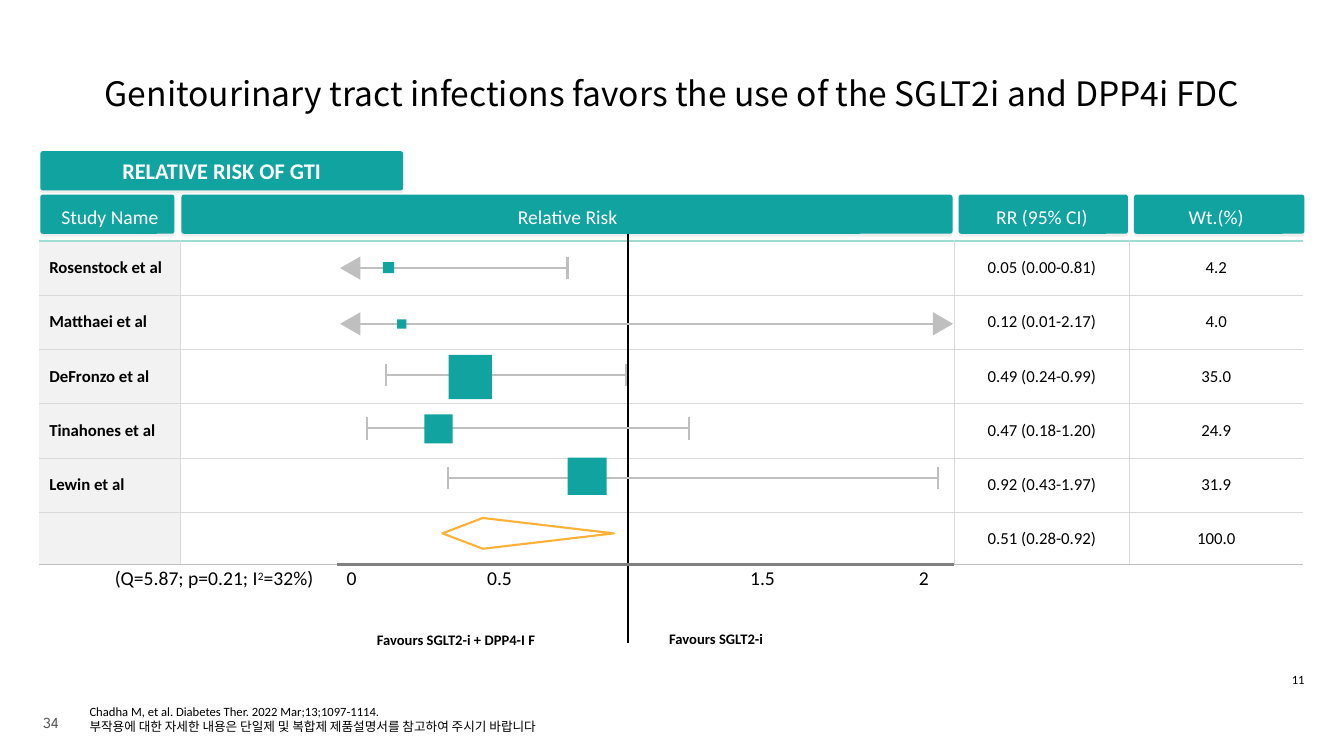
from pptx import Presentation
from pptx.dml.color import RGBColor
from pptx.enum.shapes import MSO_CONNECTOR, MSO_SHAPE
from pptx.enum.text import MSO_ANCHOR as ANCHOR, PP_ALIGN as ALIGN
from pptx.oxml.ns import qn
from pptx.util import Pt
from lxml.etree import SubElement

TEAL = RGBColor(0x10, 0xA3, 0x9F)
MINT = RGBColor(0x9F, 0xDD, 0xD3)
AMBER = RGBColor(0xFD, 0xB1, 0x36)
BLACK = RGBColor(0, 0, 0)
WHITE = RGBColor(0xFF, 0xFF, 0xFF)
PALE = RGBColor(0xF2, 0xF2, 0xF2)
GRID = RGBColor(0xD9, 0xD9, 0xD9)
SILVER = RGBColor(0xBF, 0xBF, 0xBF)
GRAY = RGBColor(0x80, 0x80, 0x80)
DARK = RGBColor(0x51, 0x51, 0x51)
BODY_FONT = "Calibri"
NO_GRID_STYLE = "{2D5ABB26-0587-4C30-8999-92F81FD0307C}"

COLUMNS = [101, 553, 124.5, 124.5]
ROWS = [33, 38.8, 38.8, 38.8, 38.8, 38.8, 37.2]
TABLE = [
    ("Study Name", "Relative Risk", "RR (95% CI)", "Wt.(%)"),
    ("Rosenstock et al", "", "0.05 (0.00-0.81)", "4.2"),
    ("Matthaei et al", "", "0.12 (0.01-2.17)", "4.0"),
    ("DeFronzo et al", "", "0.49 (0.24-0.99)", "35.0"),
    ("Tinahones et al", "", "0.47 (0.18-1.20)", "24.9"),
    ("Lewin et al", "", "0.92 (0.43-1.97)", "31.9"),
    ("", "", "0.51 (0.28-0.92)", "100.0"),
]
# Left and width of the header plates
PLATES = [(28.8, 95.8), (129.6, 550.8), (684.7, 121), (810, 121.7)]
# Line y, low x, high x (None = arrow), marker centre x, y, width, height
STUDIES = [
    (191.5, None, 405.4, 277.6, 191.2, 8, 8),
    (231.3, None, None, 286.9, 231.5, 6.6, 6.6),
    (267.8, 275.8, 447.1, 335.9, 269.3, 31, 31.6),
    (306, 262.1, 492.1, 313.2, 306.4, 20.2, 20.8),
    (341.3, 319.9, 670, 419.4, 340.2, 28, 26.8),
]
ARROW_LEFT_X, ARROW_RIGHT_X = 250.2, 673.6
CAP_HEIGHT = 16
# Text, left, width of the axis labels
TICKS = [("0", 240.5, 19.4), ("0.5", 340.6, 32.4),
         ("1.5", 528.5, 32.4), ("2", 643.7, 32.4)]


def style(paragraph, size, color=BLACK, bold=False, align=ALIGN.LEFT, font=BODY_FONT):
    paragraph.alignment = align
    paragraph.font.size = Pt(size)
    paragraph.font.name = font
    paragraph.font.bold = bold
    paragraph.font.color.rgb = color


def add_text(slide, lines, left, top, width, height, size, anchor=ANCHOR.TOP, **look):
    box = slide.shapes.add_textbox(Pt(left), Pt(top), Pt(width), Pt(height))
    frame = box.text_frame
    frame.word_wrap = True
    frame.vertical_anchor = anchor
    frame.text = lines
    for paragraph in frame.paragraphs:
        style(paragraph, size, **look)
    return box


def raise_run(run):
    run._r.get_or_add_rPr().set("baseline", "30000")


def add_shape(slide, kind, left, top, width, height, fill):
    shape = slide.shapes.add_shape(kind, Pt(left), Pt(top), Pt(width), Pt(height))
    shape.shadow.inherit = False
    shape.fill.solid()
    shape.fill.fore_color.rgb = fill
    shape.line.fill.background()
    return shape


def add_plate(slide, left, top, width):
    plate = add_shape(slide, MSO_SHAPE.ROUNDED_RECTANGLE, left, top, width, 28, TEAL)
    plate.adjustments[0] = 0.069
    effects = plate._element.spPr.find(qn("a:effectLst"))
    shadow = SubElement(effects, qn("a:outerShdw"), blurRad="0", dist=str(Pt(2)),
                        dir="5400000", algn="t", rotWithShape="0")
    color = SubElement(shadow, qn("a:srgbClr"), val=str(SILVER))
    SubElement(color, qn("a:alpha"), val="25000")
    return plate


def add_line(slide, x1, y1, x2, y2, color=SILVER, width=1.5):
    line = slide.shapes.add_connector(MSO_CONNECTOR.STRAIGHT, Pt(x1), Pt(y1), Pt(x2), Pt(y2))
    line.line.color.rgb = color
    line.line.width = Pt(width)
    SubElement(line._element.spPr, qn("a:effectLst"))


def set_borders(cell, borders):
    """Draw the sides given in schema order: lnL, lnR, lnT, lnB."""
    properties = cell._tc.get_or_add_tcPr()
    for index, (side, color, width) in enumerate(borders):
        line = properties.makeelement(qn("a:" + side), {"w": str(Pt(width))})
        fill = SubElement(line, qn("a:solidFill"))
        SubElement(fill, qn("a:srgbClr"), val=str(color))
        properties.insert(index, line)


def cell_borders(row, column):
    top = ("lnT", MINT, 1.5) if row == 1 else ("lnT", GRID, 0.5)
    bottom = ("lnB", SILVER, 0.75) if row == len(ROWS) - 1 else ("lnB", GRID, 0.5)
    if row == 0:
        return [("lnB", MINT, 1.5)]
    left = [("lnL", GRID, 0.5)] if column > 0 else []
    right = [("lnR", GRID, 0.5)] if column < len(COLUMNS) - 1 else []
    return left + right + [top, bottom]


def add_results_table(slide):
    frame = slide.shapes.add_table(len(ROWS), len(COLUMNS), Pt(28), Pt(139),
                                   Pt(sum(COLUMNS)), Pt(sum(ROWS)))
    table = frame.table
    table.first_row = table.horz_banding = False
    table._tbl.tblPr.find(qn("a:tableStyleId")).text = NO_GRID_STYLE
    for column, width in zip(table.columns, COLUMNS):
        column.width = Pt(width)
    for row_index, (row, height) in enumerate(zip(table.rows, ROWS)):
        row.height = Pt(height)
        for column_index, cell in enumerate(row.cells):
            header, label = row_index == 0, column_index == 0
            cell.text = TABLE[row_index][column_index]
            cell.vertical_anchor = ANCHOR.MIDDLE
            style(cell.text_frame.paragraphs[0], 14 if header else 12,
                  WHITE if header else BLACK, label and not header,
                  ALIGN.LEFT if label and not header else ALIGN.CENTER)
            if label and not header:
                cell.fill.solid()
                cell.fill.fore_color.rgb = PALE
            else:
                cell.fill.background()
            set_borders(cell, cell_borders(row_index, column_index))


def add_arrow(slide, x, y, rotation):
    arrow = add_shape(slide, MSO_SHAPE.ISOSCELES_TRIANGLE, x - 8.3, y - 7.2, 16.6, 14.4, SILVER)
    arrow.rotation = rotation


def add_study(slide, y, low, high, marker_x, marker_y, width, height):
    add_line(slide, low or ARROW_LEFT_X + 7, y, high or ARROW_RIGHT_X - 7, y)
    for end, arrow_x, rotation in ((low, ARROW_LEFT_X, 270), (high, ARROW_RIGHT_X, 90)):
        if end is None:
            add_arrow(slide, arrow_x, y, rotation)
        else:
            add_line(slide, end, y - CAP_HEIGHT / 2, end, y + CAP_HEIGHT / 2)
    add_shape(slide, MSO_SHAPE.RECTANGLE, marker_x - width / 2, marker_y - height / 2,
              width, height, TEAL)


def add_summary_diamond(slide):
    builder = slide.shapes.build_freeform(Pt(344.9), Pt(370))
    builder.add_line_segments([(Pt(316), Pt(381)), (Pt(344.9), Pt(392)), (Pt(438.5), Pt(381))])
    diamond = builder.convert_to_shape()
    diamond.shadow.inherit = False
    diamond.fill.background()
    diamond.line.color.rgb = AMBER
    diamond.line.width = Pt(1.5)


def main():
    presentation = Presentation()
    presentation.slide_width, presentation.slide_height = Pt(960), Pt(540)
    slide = presentation.slides.add_slide(presentation.slide_layouts[6])

    # Title and page numbers
    add_text(slide, "34", 23.8, 501.8, 216, 28.8, 11, ANCHOR.MIDDLE,
             color=DARK, font="League Spartan")
    add_text(slide, "Genitourinary tract infections favors the use of the SGLT2i and DPP4i FDC",
             48, 21.6, 864, 90, 24, ANCHOR.MIDDLE, align=ALIGN.CENTER, font="Noto Sans CJK KR")
    page = add_text(slide, "11", 886.3, 477.4, 52.6, 17.3, 9, ANCHOR.BOTTOM, align=ALIGN.RIGHT)
    page.text_frame.paragraphs[0].line_spacing = 0.9

    # Header plates, table and banner
    for left, width in PLATES:
        add_plate(slide, left, 139, width)
    add_results_table(slide)
    banner = add_plate(slide, 28.8, 108, 259.2)
    banner.text_frame.text = "RELATIVE RISK OF GTI"
    banner.text_frame.word_wrap = False
    banner.text_frame.vertical_anchor = ANCHOR.MIDDLE
    style(banner.text_frame.paragraphs[0], 16, WHITE, True, ALIGN.CENTER)

    # Forest plot
    add_line(slide, 448.6, 167, 448.6, 459.4, BLACK, 2)
    for study in STUDIES:
        add_study(slide, *study)
    add_summary_diamond(slide)

    # Axis and its labels
    for text, left, width in TICKS:
        add_text(slide, text, left, 401, width, 24.5, 14, align=ALIGN.CENTER)
    statistics = add_text(slide, "(Q=5.87; p=0.21; I", 74.9, 401, 159.8, 26.6, 14)
    paragraph = statistics.text_frame.paragraphs[0]
    for text in ("2", "=32%)"):
        paragraph.add_run().text = text
    raise_run(paragraph.runs[1])
    for text, left, top, width in (("Favours SGLT2-i + DPP4-I F", 262.1, 445, 180),
                                   ("Favours SGLT2-i", 470.9, 444.2, 134.6)):
        favours = add_text(slide, text, left, top, width, 43.9, 18, bold=True)
        raise_run(favours.text_frame.paragraphs[0].runs[0])
    add_line(slide, 240.5, 403.2, 681.1, 403.2, GRAY)

    # Source and note
    add_text(slide, "Chadha M, et al. Diabetes Ther. 2022 Mar;13;1097-1114.\n"
             "부작용에 대한 자세한 내용은 단일제 및 복합제 제품설명서를 참고하여 주시기 바랍니다",
             56.9, 493.2, 872, 41, 9, ANCHOR.MIDDLE)

    presentation.save("out.pptx")


if __name__ == "__main__":
    main()
